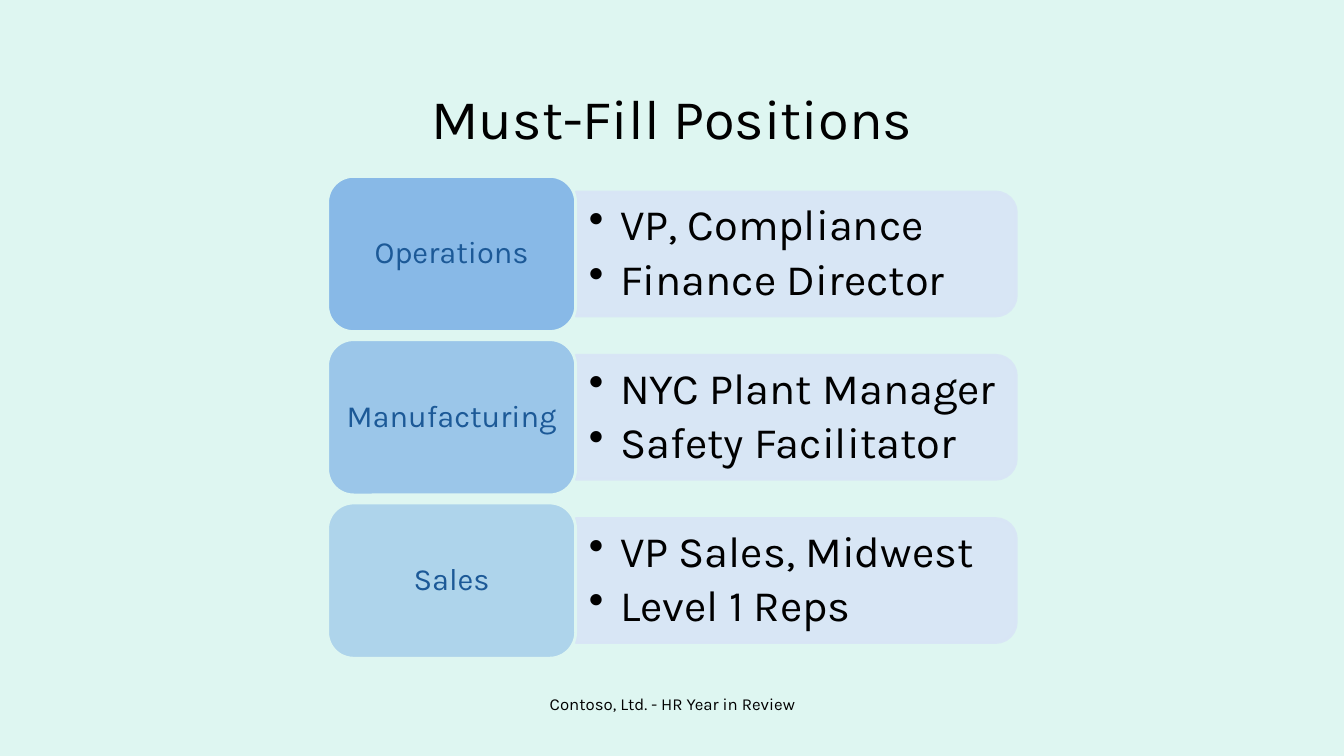
import pptx
import pptx.util
import pptx.dml.color
import pptx.enum.shapes
import pptx.enum.text
import pptx.oxml
import pptx.oxml.ns
import lxml.etree

Inches = pptx.util.Inches
Pt = pptx.util.Pt
SHAPES = pptx.enum.shapes.MSO_SHAPE
ANCHOR = pptx.enum.text.MSO_ANCHOR
CENTER = pptx.enum.text.PP_ALIGN.CENTER

# Content
TITLE = "Must-Fill Positions"
FOOTER = "Contoso, Ltd. - HR Year in Review"
DEPARTMENTS = [  # name, opacity of its label in percent, open positions
    ("Operations", 90, ["VP, Compliance", "Finance Director"]),
    ("Manufacturing", 70, ["NYC Plant Manager", "Safety Facilitator"]),
    ("Sales", 50, ["VP Sales, Midwest", "Level 1 Reps"]),
]

# Style
FONT = "Karla"
COLORS = {
    "background": "DEF6F1",
    "bar": "D8E5F6",
    "label": "7FB3E7",
    "label_text": "1C5997",
    "text": "000000",
}

# Layout in inches
ROWS_TOP, ROW_PITCH = 1.75, 1.62
LABEL_LEFT, LABEL_WIDTH, LABEL_HEIGHT = 3.25, 2.46, 1.54
BAR_LEFT, BAR_WIDTH, BAR_HEIGHT = LABEL_LEFT + LABEL_WIDTH, 4.37, 1.23
LIST_WIDTH, LIST_HEIGHT = 4.31, 1.11
BULLET_INDENT = 0.31


def rgb(name):
    return pptx.dml.color.RGBColor.from_string(COLORS[name])


def set_opacity(fill_format_parent, percent):
    for color in fill_format_parent.iter(pptx.oxml.ns.qn("a:srgbClr")):
        alpha = lxml.etree.SubElement(color, pptx.oxml.ns.qn("a:alpha"))
        alpha.set("val", str(percent * 1000))


def add_block(shape_type, left, top, width, height, fill, line):
    shape = slide.shapes.add_shape(
        shape_type, Inches(left), Inches(top), Inches(width), Inches(height))
    shape.shadow.inherit = False
    shape.fill.solid()
    shape.fill.fore_color.rgb = rgb(fill)
    shape.line.color.rgb = rgb(line)
    shape.line.width = Pt(2)
    return shape


def add_text_box(left, top, width, height):
    return slide.shapes.add_textbox(
        Inches(left), Inches(top), Inches(width), Inches(height)).text_frame


def set_frame(frame, side, end):
    frame.word_wrap = True
    frame.vertical_anchor = ANCHOR.MIDDLE
    frame.margin_left = frame.margin_right = Inches(side)
    frame.margin_top = frame.margin_bottom = Inches(end)


def add_run(paragraph, text, size, color="text"):
    run = paragraph.add_run()
    run.text = text
    run.font.name = FONT
    run.font.size = Pt(size)
    run.font.color.rgb = rgb(color)


def add_bullet(paragraph):
    properties = paragraph._p.get_or_add_pPr()
    properties.set("marL", str(Inches(BULLET_INDENT)))
    properties.set("indent", str(-Inches(BULLET_INDENT)))
    bullet = lxml.etree.SubElement(properties, pptx.oxml.ns.qn("a:buChar"))
    bullet.set("char", "•")


presentation = pptx.Presentation()
presentation.slide_width = Inches(13.33)
presentation.slide_height = Inches(7.5)
slide = presentation.slides.add_slide(presentation.slide_layouts[5])
slide.background.fill.solid()
slide.background.fill.fore_color.rgb = rgb("background")

# Title
title = slide.shapes.title
title.left, title.top = Inches(2.11), Inches(0.5)
title.width, title.height = Inches(9.11), Inches(1.33)
title.text_frame.vertical_anchor = ANCHOR.MIDDLE
title_paragraph = title.text_frame.paragraphs[0]
title_paragraph.alignment = CENTER
add_run(title_paragraph, TITLE, 40)

# One row per department
for row, (department, opacity, positions) in enumerate(DEPARTMENTS):
    top = ROWS_TOP + row * ROW_PITCH
    middle = top + LABEL_HEIGHT / 2

    # Bar, turned so that its rounded corners face right
    bar = add_block(
        SHAPES.ROUND_2_SAME_RECTANGLE,
        BAR_LEFT + (BAR_WIDTH - BAR_HEIGHT) / 2, middle - BAR_WIDTH / 2,
        BAR_HEIGHT, BAR_WIDTH, "bar", "bar")
    bar.rotation = 90
    set_opacity(bar._element.spPr, 90)

    # Open positions
    frame = add_text_box(BAR_LEFT, middle - LIST_HEIGHT / 2, LIST_WIDTH, LIST_HEIGHT)
    set_frame(frame, 0.13, 0.06)
    for index, position in enumerate(positions):
        paragraph = frame.add_paragraph() if index else frame.paragraphs[0]
        add_bullet(paragraph)
        paragraph.level = 1
        paragraph.line_spacing = 0.9
        paragraph.space_after = Pt(5.5)
        add_run(paragraph, position, 31)

    # Department label
    label = add_block(SHAPES.ROUNDED_RECTANGLE, LABEL_LEFT, top,
                      LABEL_WIDTH, LABEL_HEIGHT, "label", "background")
    set_opacity(label._element.spPr.find(pptx.oxml.ns.qn("a:solidFill")), opacity)
    set_frame(label.text_frame, 0.09, 0.05)
    paragraph = label.text_frame.paragraphs[0]
    paragraph.alignment = CENTER
    paragraph.line_spacing = 0.9
    add_run(paragraph, department, 22, "label_text")

# Footer
footer = add_text_box(4.56, 6.83, 4.22, 0.52)
footer.word_wrap = True
footer.paragraphs[0].alignment = CENTER
add_run(footer.paragraphs[0], FOOTER, 12)

presentation.save("out.pptx")
